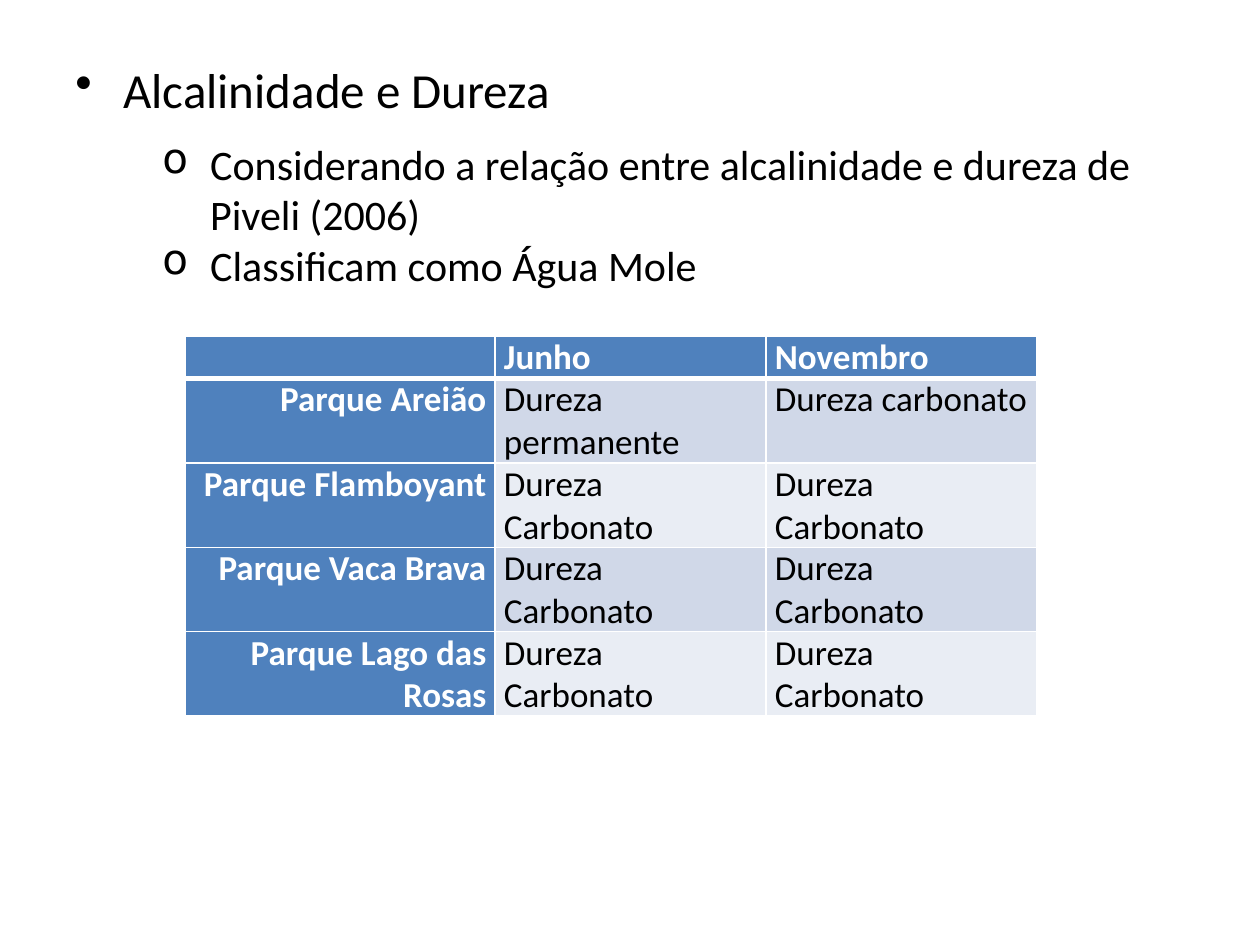
from lxml.etree import SubElement
from pptx import Presentation
from pptx.dml.color import RGBColor
from pptx.enum.text import PP_ALIGN
from pptx.oxml.ns import qn
from pptx.util import Inches, Pt

COLORS = {"text": "000000", "white": "FFFFFF", "head": "4F81BD",
          "odd": "D0D8E8", "even": "E9EDF4"}
FONT = "Calibri"
TOPIC = ["Alcalinidade e Dureza"]
POINTS = ["Considerando a relação entre alcalinidade e dureza de Piveli (2006)",
          "Classificam como Água Mole"]
ROWS = [
    ["", "Junho", "Novembro"],
    ["Parque Areião", "Dureza permanente", "Dureza carbonato"],
    ["Parque Flamboyant", "Dureza Carbonato", "Dureza Carbonato"],
    ["Parque Vaca Brava", "Dureza Carbonato", "Dureza Carbonato"],
    ["Parque Lago das Rosas", "Dureza Carbonato", "Dureza Carbonato"],
]


def rgb(name):
    """Return the named colour."""
    return RGBColor.from_string(COLORS[name])


def add_run(p, text, size, color, bold=False):
    """Add one formatted run to a paragraph."""
    r = p.add_run()
    r.text = text
    r.font.name, r.font.size, r.font.bold = FONT, Pt(size), bold
    r.font.color.rgb = rgb(color)


def add_bullets(s, box, items, char, size):
    """Place a bulleted list in the given box."""
    tf = s.shapes.add_textbox(*map(Inches, box)).text_frame
    tf.word_wrap = True
    for i, text in enumerate(items):
        p = tf.add_paragraph() if i else tf.paragraphs[0]
        pPr = p._p.get_or_add_pPr()
        pPr.set("marL", str(Inches(0.38)))
        pPr.set("indent", str(-Inches(0.38)))
        SubElement(pPr, qn("a:buChar"), char=char)
        add_run(p, text, size, "text")


def set_borders(cell, row):
    """Draw white cell borders, thicker under the header row."""
    tcPr = cell._tc.get_or_add_tcPr()
    widths = {"L": 1, "R": 1, "T": 3 if row == 1 else 1, "B": 3 if row == 0 else 1}
    for side, width in widths.items():
        ln = SubElement(tcPr, qn(f"a:ln{side}"), w=str(Pt(width)))
        SubElement(SubElement(ln, qn("a:solidFill")), qn("a:srgbClr"), val=COLORS["white"])


def add_hardness_table(s, box):
    """Place the table of hardness by park and month in the given box."""
    table = s.shapes.add_table(len(ROWS), len(ROWS[0]), *map(Inches, box)).table
    for col, width in zip(table.columns, (2.46, 2.15, 2.15)):
        col.width = Inches(width)
    for i, row in enumerate(ROWS):
        table.rows[i].height = Inches(0.67 if i else 0.33)
        for j, text in enumerate(row):
            cell = table.cell(i, j)
            cell.margin_left = cell.margin_right = Inches(0.07)
            cell.margin_top = cell.margin_bottom = 0
            set_borders(cell, i)
            head = i == 0 or j == 0
            cell.fill.solid()
            cell.fill.fore_color.rgb = rgb("head" if head else "odd" if i % 2 else "even")
            p = cell.text_frame.paragraphs[0]
            if j == 0:
                p.alignment = PP_ALIGN.RIGHT
            if text:
                add_run(p, text, 20, "white" if head else "text", head)


def main():
    """Build and save the slide."""
    prs = Presentation()
    prs.slide_width, prs.slide_height = Inches(10), Inches(7.5)
    s = prs.slides.add_slide(prs.slide_layouts[6])
    add_bullets(s, (0.5, 0.42, 4.91, 6.23), TOPIC, "•", 28)
    add_hardness_table(s, (1.47, 2.67, 6.76, 3))
    add_bullets(s, (1.19, 1.05, 8.57, 1.31), POINTS, "o", 24)
    prs.save("out.pptx")


if __name__ == "__main__":
    main()
